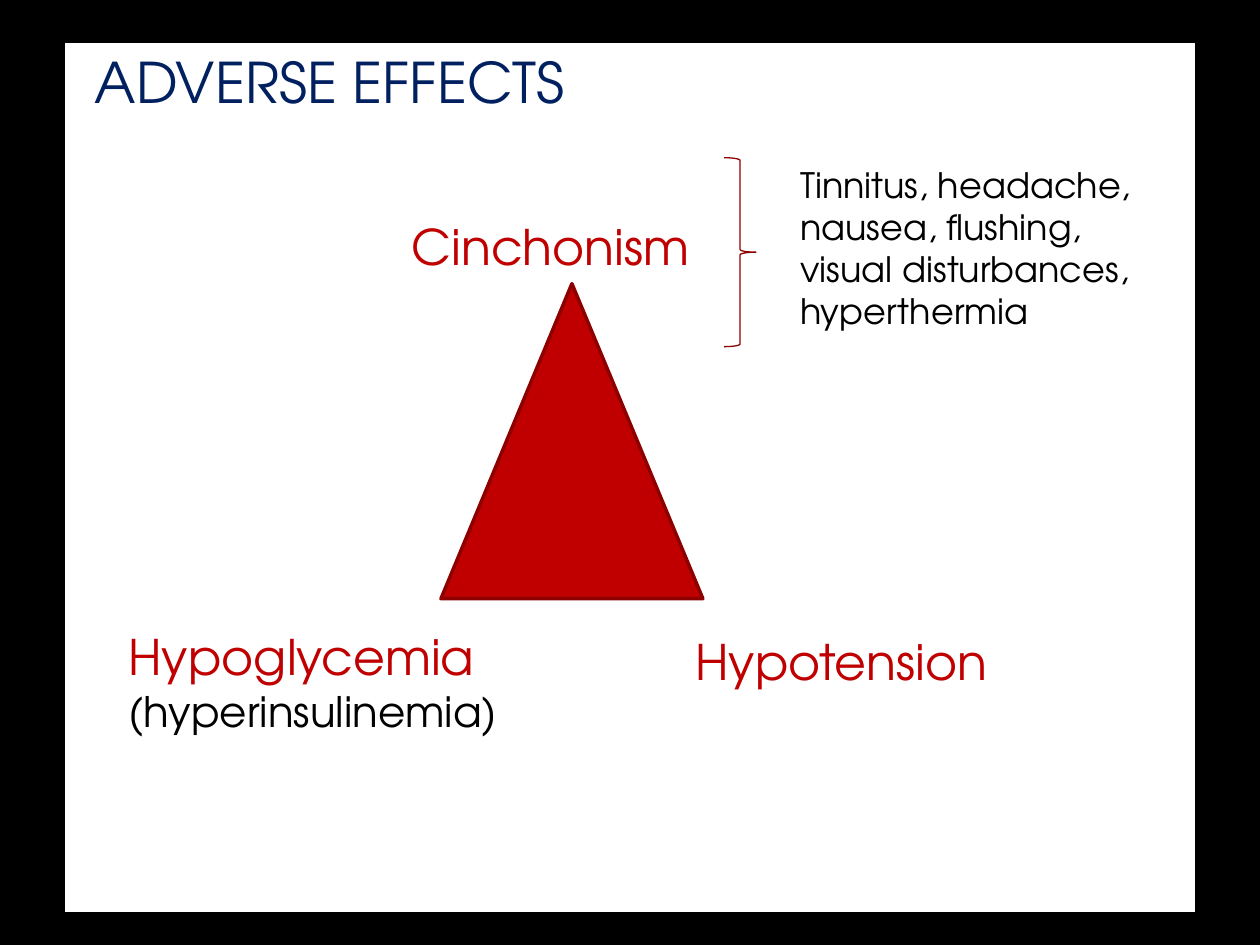
from typing import NamedTuple, Optional

from pptx import Presentation
from pptx.dml.color import RGBColor
from pptx.enum.shapes import MSO_SHAPE
from pptx.enum.text import MSO_ANCHOR, PP_ALIGN
from pptx.util import Cm, Pt

RECTANGLE = MSO_SHAPE.RECTANGLE
TRIANGLE = MSO_SHAPE.ISOSCELES_TRIANGLE
RIGHT_BRACE = MSO_SHAPE.RIGHT_BRACE
TOP = MSO_ANCHOR.TOP
LEFT = PP_ALIGN.LEFT

FONT = "TeX Gyre Adventor"
BLACK, WHITE, NAVY = "000000", "FFFFFF", "002060"
RED, DARK_RED = "C00000", "8E0000"


class Box(NamedTuple):
    """Position and size in centimetres."""
    left: float
    top: float
    width: float
    height: float


class Line(NamedTuple):
    text: str
    size: int
    color: str


class Label(NamedTuple):
    box: Box
    lines: list[Line]


class Figure(NamedTuple):
    kind: MSO_SHAPE
    box: Box
    fill: Optional[str]
    outline: str
    weight: float


PANEL = Figure(RECTANGLE, Box(1.27, 0.84, 22.86, 17.58), WHITE, BLACK, 2)
TITLE = Line("ADVERSE EFFECTS", 32, NAVY)
FIGURES = [
    Figure(TRIANGLE, Box(8.89, 5.72, 5.28, 6.35), RED, DARK_RED, 2),
    Figure(RIGHT_BRACE, Box(14.6, 3.18, 0.64, 3.81), None, "8C0000", 0.75),
]
LABELS = [
    Label(Box(8.05, 4.24, 7.19, 1.45), [Line("Cinchonism", 28, RED)]),
    Label(Box(13.77, 12.6, 7.82, 2.64), [Line("Hypotension", 28, RED)]),
    Label(Box(2.34, 12.5, 8.26, 3.68), [
        Line("Hypoglycemia", 28, RED),
        Line("(hyperinsulinemia)", 24, BLACK),
    ]),
    Label(Box(15.88, 3.18, 7.42, 3.68), [
        Line("Tinnitus, headache,", 20, BLACK),
        Line("nausea, flushing, visual disturbances, hyperthermia", 20, BLACK),
    ]),
]


def set_color(target, color: str) -> None:
    target.rgb = RGBColor.from_string(color)


def place(box: Box) -> list[int]:
    return [Cm(length) for length in box]


def write(text_frame, lines: list[Line]) -> None:
    text_frame.word_wrap = True
    text_frame.vertical_anchor = TOP
    for index, line in enumerate(lines):
        paragraph = text_frame.add_paragraph() if index else text_frame.paragraphs[0]
        paragraph.text = line.text
        paragraph.alignment = LEFT
        paragraph.font.name = FONT
        paragraph.font.size = Pt(line.size)
        set_color(paragraph.font.color, line.color)


def draw_figure(slide, figure: Figure):
    shape = slide.shapes.add_shape(figure.kind, *place(figure.box))
    shape.shadow.inherit = False
    if figure.fill:
        shape.fill.solid()
        set_color(shape.fill.fore_color, figure.fill)
    else:
        shape.fill.background()
    set_color(shape.line.color, figure.outline)
    shape.line.width = Pt(figure.weight)
    return shape


def draw_label(slide, label: Label) -> None:
    write(slide.shapes.add_textbox(*place(label.box)).text_frame, label.lines)


def main() -> None:
    presentation = Presentation()
    presentation.slide_width, presentation.slide_height = Cm(25.4), Cm(19.05)
    slide = presentation.slides.add_slide(presentation.slide_layouts[6])
    slide.background.fill.solid()
    set_color(slide.background.fill.fore_color, BLACK)

    # White panel carrying the title
    panel = draw_figure(slide, PANEL)
    write(panel.text_frame, [TITLE])
    panel.text_frame.margin_left = Cm(0.64)

    # Triangle and brace
    for figure in FIGURES:
        draw_figure(slide, figure)

    # Effects at the corners and the symptom list
    for label in LABELS:
        draw_label(slide, label)

    presentation.save("out.pptx")


if __name__ == "__main__":
    main()
